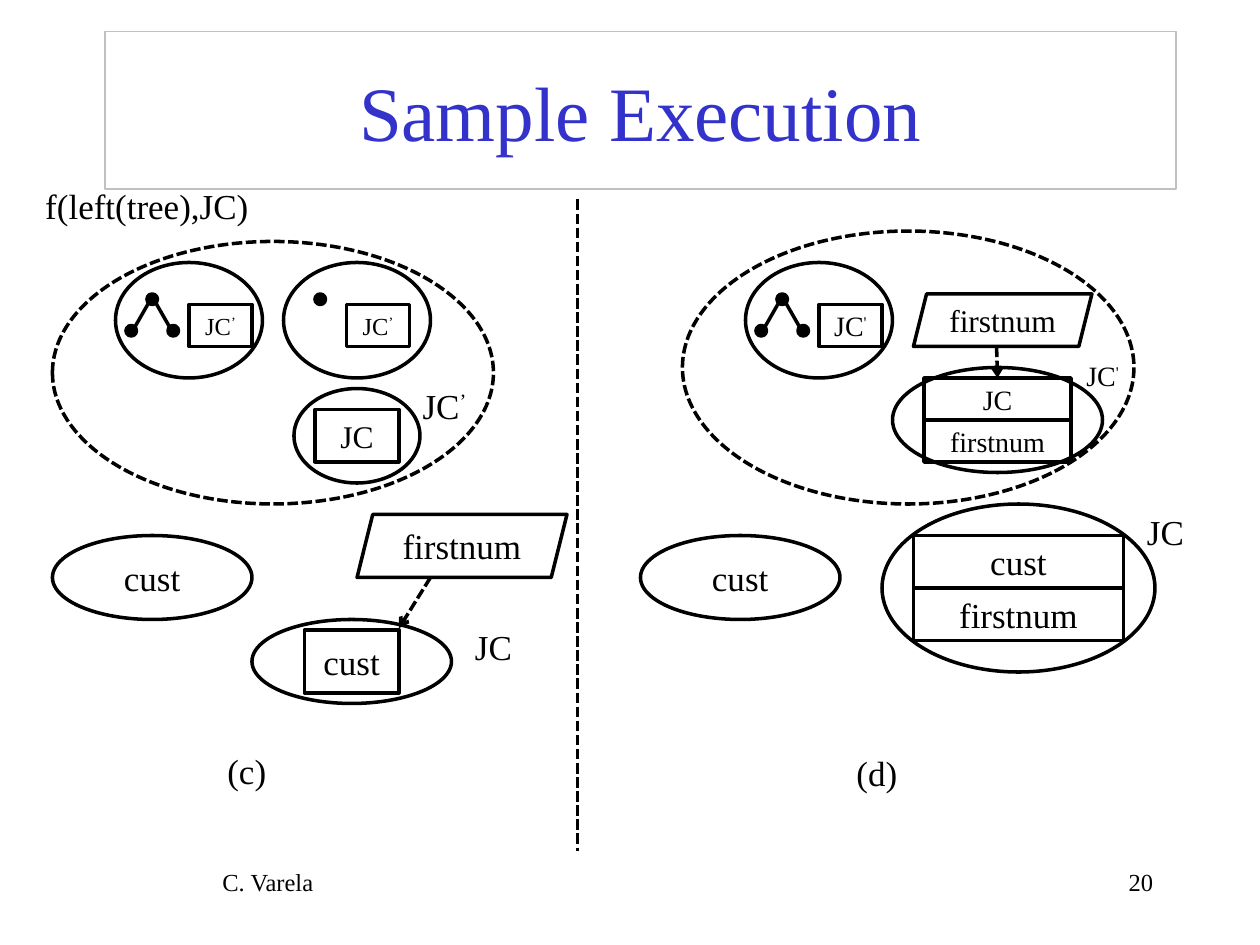
import pptx
import pptx.dml.color
import pptx.enum.dml
import pptx.enum.shapes
import pptx.enum.text
import pptx.oxml.ns
import pptx.util
from lxml import etree

Pt = pptx.util.Pt
SHAPE = pptx.enum.shapes.MSO_SHAPE
ALIGN = pptx.enum.text.PP_ALIGN
ANCHOR = pptx.enum.text.MSO_ANCHOR
DASH = pptx.enum.dml.MSO_LINE.SQUARE_DOT
BLACK = pptx.dml.color.RGBColor(0x00, 0x00, 0x00)
BLUE = pptx.dml.color.RGBColor(0x33, 0x33, 0xCC)
GRAY = pptx.dml.color.RGBColor(0xC0, 0xC0, 0xC0)
FONT = "Times New Roman"


def write(sp, text, size, prime="", align=ALIGN.CENTER, color=BLACK):
    """Write one line, with an optional raised prime mark after it."""
    p = sp.text_frame.paragraphs[0]
    p.alignment = align
    p.font.name, p.font.size = FONT, Pt(size)
    p.font.color.rgb = color
    p.add_run().text = text
    if prime:
        r = p.add_run()
        r.text = prime
        r._r.get_or_add_rPr().set("baseline", "30000")


def add_outline(shapes, kind, x, y, w, h, text="", size=20, prime="",
                dashed=False, color=BLACK, width=2, text_color=BLACK):
    sp = shapes.add_shape(kind, Pt(x), Pt(y), Pt(w), Pt(h))
    sp.shadow.inherit = False
    sp.fill.background()
    sp.line.color.rgb = color
    sp.line.width = Pt(width)
    if dashed:
        sp.line.dash_style = DASH
    if text:
        sp.text_frame.vertical_anchor = ANCHOR.MIDDLE
        write(sp, text, size, prime, color=text_color)
    return sp


def add_label(shapes, x, y, w, h, text, size=20, prime="", align=ALIGN.CENTER, wrap=True):
    sp = shapes.add_textbox(Pt(x), Pt(y), Pt(w), Pt(h))
    sp.text_frame.word_wrap = wrap
    write(sp, text, size, prime, align)


def add_line(shapes, x1, y1, x2, y2, dashed=False, arrow=False):
    line = shapes.add_connector(pptx.enum.shapes.MSO_CONNECTOR.STRAIGHT,
                                Pt(x1), Pt(y1), Pt(x2), Pt(y2))
    line.line.color.rgb = BLACK
    line.line.width = Pt(2)
    if dashed:
        line.line.dash_style = DASH
    if arrow:
        ln = line.line._get_or_add_ln()
        etree.SubElement(ln, pptx.oxml.ns.qn("a:tailEnd"), type="arrow")
    etree.SubElement(line._element.spPr, pptx.oxml.ns.qn("a:effectLst"))
    return line


def add_node(shapes, x, y):
    sp = add_outline(shapes, SHAPE.OVAL, x, y, 6, 6)
    sp.fill.solid()
    sp.fill.fore_color.rgb = BLACK


def add_tree(shapes, x):
    """Root with two children; x is the left edge of the root."""
    for dx, y in ((0, 168), (-12, 186), (12, 186)):
        add_node(shapes, x + dx, y)
    add_line(shapes, x + 1, 173, x - 7, 187)
    add_line(shapes, x + 5, 173, x + 13, 187)


def build_c(shapes):
    add_outline(shapes, SHAPE.OVAL, 30, 306, 114, 48, "cust")

    # Environment with the three actors
    env = shapes.add_group_shape().shapes
    add_tree(env, 84)
    add_outline(env, SHAPE.OVAL, 30, 138, 252, 150, dashed=True)
    for x in (66, 162):
        add_outline(env, SHAPE.OVAL, x, 150, 84, 66)
    add_outline(env, SHAPE.OVAL, 168, 222, 72, 54)
    for x in (108, 198):
        add_outline(env, SHAPE.RECTANGLE, x, 174, 36, 24, "JC", 14, "’")
    add_node(env, 180, 168)
    add_outline(env, SHAPE.RECTANGLE, 180, 234, 48, 30, "JC", 18)
    add_label(shapes, 234, 216, 40, 32, "JC", prime="’", wrap=False)

    # Join continuation receiving its message
    add_outline(shapes, SHAPE.OVAL, 144, 354, 114, 48, "cust")
    add_outline(shapes, SHAPE.RECTANGLE, 174, 360, 54, 36)
    add_label(shapes, 258, 354, 48, 32, "JC")
    add_outline(shapes, SHAPE.PARALLELOGRAM, 204, 294, 120, 36, "firstnum")
    add_line(shapes, 246, 330, 228, 359, dashed=True, arrow=True)
    add_label(shapes, 114, 425, 54, 32, "(c)")


def build_d(shapes):
    # Environment with the remaining actors
    env = shapes.add_group_shape().shapes
    add_tree(env, 444)
    add_outline(env, SHAPE.OVAL, 390, 132, 258, 156, dashed=True)
    add_outline(env, SHAPE.OVAL, 426, 150, 84, 66)
    add_outline(env, SHAPE.OVAL, 510, 210, 120, 60)
    add_outline(env, SHAPE.RECTANGLE, 468, 174, 36, 24, "JC", 16, "'")
    target = add_outline(env, SHAPE.RECTANGLE, 528, 216, 84, 24, "JC", 16)
    add_outline(shapes, SHAPE.PARALLELOGRAM, 522, 168, 102, 30, "firstnum", 18)
    arrow = add_line(shapes, 569.5, 198, 570, 216, dashed=True, arrow=True)
    arrow.end_connect(target, 0)
    add_outline(shapes, SHAPE.RECTANGLE, 528, 240, 84, 24, "firstnum", 16)
    add_label(shapes, 606, 201.5, 48, 27, "JC", 16, "'")

    # Customer and join continuation
    add_outline(shapes, SHAPE.OVAL, 366, 306, 114, 48, "cust")
    add_outline(shapes, SHAPE.OVAL, 504, 288, 156, 96)
    for y, text in ((306, "cust"), (336, "firstnum")):
        add_outline(shapes, SHAPE.RECTANGLE, 522, y, 120, 30, text)
    add_label(shapes, 642, 288, 48, 32, "JC")
    add_label(shapes, 474, 426, 54, 32, "(d)")


def main():
    prs = pptx.Presentation()
    prs.slide_width, prs.slide_height = Pt(720), Pt(540)
    s = prs.slides.add_slide(prs.slide_layouts[6])
    shapes = s.shapes

    # Title and footer
    add_outline(shapes, SHAPE.RECTANGLE, 60, 18, 612, 90, "Sample Execution", 44,
                color=GRAY, width=0.75, text_color=BLUE)
    add_label(shapes, 120, 492, 480, 36, "C. Varela", 14, align=ALIGN.LEFT)
    add_label(shapes, 516, 492, 150, 36, "20", 14, align=ALIGN.RIGHT)

    # Two execution steps, side by side
    add_label(shapes, 12, 102, 144, 32, "f(left(tree),JC)")
    build_c(shapes)
    add_line(shapes, 330, 114, 330, 486, dashed=True)
    build_d(shapes)
    prs.save("out.pptx")


if __name__ == "__main__":
    main()
